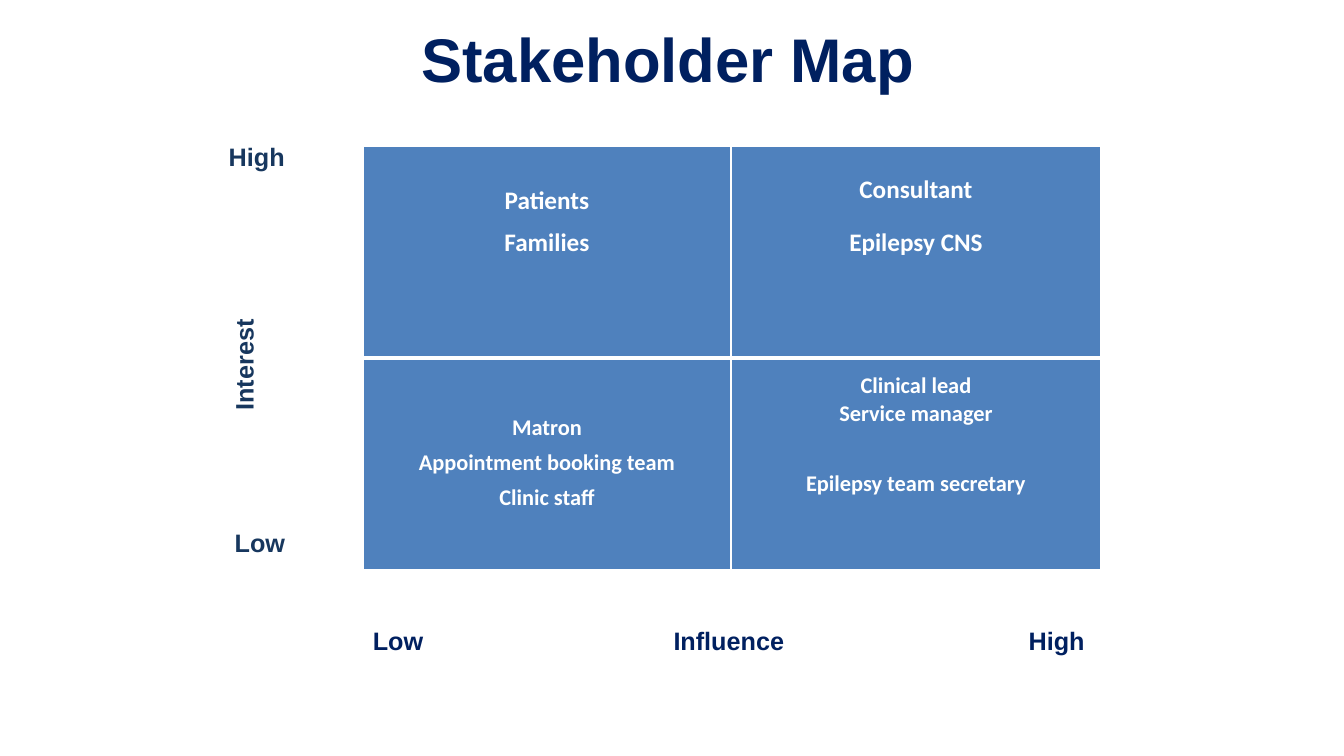
"""Build the Stakeholder Map slide."""
from dataclasses import dataclass

from lxml.etree import SubElement
from pptx import Presentation
from pptx.dml.color import RGBColor
from pptx.enum.text import MSO_ANCHOR, PP_ALIGN
from pptx.oxml.ns import qn
from pptx.slide import Slide
from pptx.table import _Cell
from pptx.text.text import _Paragraph
from pptx.util import Inches, Pt


@dataclass(frozen=True)
class Theme:
    heading_font: str = "Arial"
    cell_font: str = "Calibri"
    navy: str = "002060"
    slate: str = "17375E"
    blue: str = "4F81BD"
    white: str = "FFFFFF"
    title_size: int = 44
    label_size: int = 18
    upper_size: int = 18
    lower_size: int = 16
    thin_border: int = 1
    thick_border: int = 3


@dataclass(frozen=True)
class Stakeholder:
    name: str
    space_before: float = 0
    line_height: float = 12


@dataclass(frozen=True)
class Quadrant:
    row: int
    column: int
    size: int
    top_margin: float
    stakeholders: tuple[Stakeholder, ...]


@dataclass(frozen=True)
class AxisLabel:
    text: str
    left: float
    top: float
    width: float
    height: float
    color: str
    rotation: int = 0
    tabs: tuple[tuple[float, str], ...] = ()


THEME = Theme()
TABLE_LEFT, TABLE_TOP = 3.6, 1.45
COLUMN_WIDTHS = (3.65, 3.67)
ROW_HEIGHTS = (2.1, 2.1)
TABLE_WIDTH = sum(COLUMN_WIDTHS)

QUADRANTS = (
    Quadrant(0, 0, THEME.upper_size, 40, (
        Stakeholder("Patients", line_height=10),
        Stakeholder("Families", 20, 10),
    )),
    Quadrant(0, 1, THEME.upper_size, 30.5, (
        Stakeholder("Consultant"),
        Stakeholder("Epilepsy CNS", 25.5),
    )),
    Quadrant(1, 0, THEME.lower_size, 48, (
        Stakeholder("Matron"),
        Stakeholder("Appointment booking team", 13),
        Stakeholder("Clinic staff", 13),
    )),
    Quadrant(1, 1, THEME.lower_size, 20, (
        Stakeholder("Clinical lead", line_height=10),
        Stakeholder("Service manager", 10, 10),
        Stakeholder("Epilepsy team secretary", 38),
    )),
)

AXIS_LABELS = (
    AxisLabel("Interest", 1.82, 3.07, 1.19, 1.01, THEME.slate, rotation=270),
    AxisLabel("High", 2.17, 1.35, 0.92, 0.4, THEME.slate),
    AxisLabel("Low", 2.23, 5.18, 0.8, 0.4, THEME.slate),
    AxisLabel("Low\tInfluence\tHigh", TABLE_LEFT, 6.15, TABLE_WIDTH, 0.4,
              THEME.navy, tabs=((3.53, "ctr"), (7.06, "r"))),
)


def add_span(para: _Paragraph, text: str, font: str, size: int, color: str) -> None:
    """Add one bold run."""
    span = para.add_run()
    span.text = text
    span.font.name = font
    span.font.size = Pt(size)
    span.font.bold = True
    span.font.color.rgb = RGBColor.from_string(color)


def add_title(page: Slide, text: str) -> None:
    """Place and format the title placeholder."""
    title = page.shapes.title
    title.left, title.top = Inches(2.17), Inches(0.18)
    title.width, title.height = Inches(8.91), Inches(0.78)
    title.text_frame.vertical_anchor = MSO_ANCHOR.MIDDLE
    para = title.text_frame.paragraphs[0]
    para.alignment = PP_ALIGN.CENTER
    add_span(para, text, THEME.heading_font, THEME.title_size, THEME.navy)


def add_axis_label(page: Slide, label: AxisLabel) -> None:
    """Add one axis label, with tab stops where it has them."""
    box = page.shapes.add_textbox(Inches(label.left), Inches(label.top),
                                  Inches(label.width), Inches(label.height))
    box.rotation = label.rotation
    box.text_frame.word_wrap = True
    box.text_frame.vertical_anchor = MSO_ANCHOR.MIDDLE
    para = box.text_frame.paragraphs[0]
    if label.tabs:
        stops = SubElement(para._p.get_or_add_pPr(), qn("a:tabLst"))
        for position, alignment in label.tabs:
            SubElement(stops, qn("a:tab"), pos=str(Inches(position)), algn=alignment)
    add_span(para, label.text, THEME.heading_font, THEME.label_size, label.color)


def add_border(cell: _Cell, side: str, width: int) -> None:
    """Draw a white border on one side of a cell."""
    line = SubElement(cell._tc.get_or_add_tcPr(), qn(f"a:ln{side}"), w=str(Pt(width)))
    fill = SubElement(line, qn("a:solidFill"))
    SubElement(fill, qn("a:srgbClr"), val=THEME.white)


def fill_quadrant(cell: _Cell, quadrant: Quadrant) -> None:
    """Format a cell and list its stakeholders."""
    inner_side = "B" if quadrant.row == 0 else "T"
    for side in "LRTB":
        add_border(cell, side, THEME.thick_border if side == inner_side else THEME.thin_border)
    cell.fill.solid()
    cell.fill.fore_color.rgb = RGBColor.from_string(THEME.blue)
    cell.margin_left = cell.margin_right = cell.margin_bottom = 0
    cell.margin_top = Pt(quadrant.top_margin)
    for index, stakeholder in enumerate(quadrant.stakeholders):
        frame = cell.text_frame
        para = frame.add_paragraph() if index else frame.paragraphs[0]
        para.alignment = PP_ALIGN.CENTER
        para.line_spacing = Pt(stakeholder.line_height)
        para.space_before = Pt(stakeholder.space_before)
        add_span(para, stakeholder.name, THEME.cell_font, quadrant.size, THEME.white)


def add_stakeholder_table(page: Slide) -> None:
    """Add the two-by-two table of stakeholders."""
    table = page.shapes.add_table(
        len(ROW_HEIGHTS), len(COLUMN_WIDTHS), Inches(TABLE_LEFT), Inches(TABLE_TOP),
        Inches(TABLE_WIDTH), Inches(sum(ROW_HEIGHTS))).table
    table.first_row = table.horz_banding = False
    for column, width in zip(table.columns, COLUMN_WIDTHS):
        column.width = Inches(width)
    for row, height in zip(table.rows, ROW_HEIGHTS):
        row.height = Inches(height)
    for quadrant in QUADRANTS:
        fill_quadrant(table.cell(quadrant.row, quadrant.column), quadrant)


def main() -> None:
    """Build and save the deck."""
    deck = Presentation()
    deck.slide_width, deck.slide_height = Inches(13.33), Inches(7.5)
    page = deck.slides.add_slide(deck.slide_layouts[5])
    add_title(page, "Stakeholder Map")
    add_stakeholder_table(page)
    for label in AXIS_LABELS:
        add_axis_label(page, label)
    deck.save("out.pptx")


if __name__ == "__main__":
    main()
